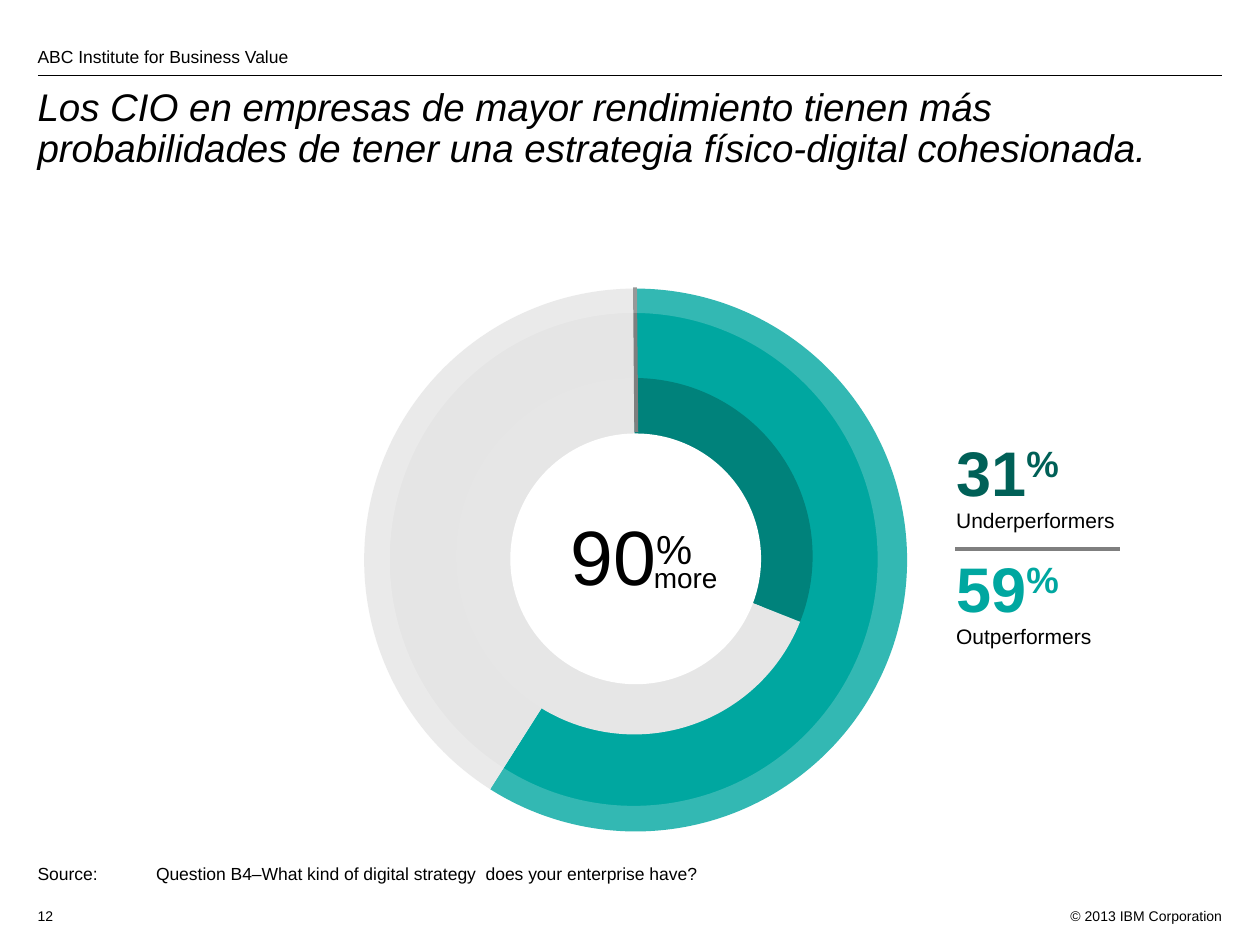
from dataclasses import dataclass

from lxml import etree
from pptx import Presentation
from pptx.chart.data import CategoryChartData
from pptx.dml.color import RGBColor
from pptx.enum.chart import XL_CHART_TYPE as ChartType
from pptx.enum.shapes import MSO_CONNECTOR as Connector, MSO_SHAPE as Shape
from pptx.enum.text import MSO_ANCHOR as Anchor, MSO_AUTO_SIZE as AutoSize, PP_ALIGN as Align
from pptx.oxml import parse_xml
from pptx.oxml.ns import nsdecls, qn
from pptx.util import Inches, Pt


@dataclass(frozen=True)
class Theme:
    font: str = "Arial"
    ink: str = "000000"
    white: str = "FFFFFF"
    rule: str = "7F7F7F"
    teal: str = "00A7A0"
    deep_teal: str = "00827B"
    dark_teal: str = "006057"
    outer_rest: str = "E5E5E5"
    inner_rest: str = "E6E6E6"
    footer: int = 8
    small: int = 10
    label: int = 12
    more: int = 16
    chart: int = 18
    title: int = 22
    stat: int = 36
    percent: int = 40
    big: int = 44


@dataclass
class Span:
    text: str
    size: int
    color: str = Theme.ink
    bold: bool = False
    italic: bool = False
    raised: bool = False


class SlideBuilder:
    def __init__(self, page, theme):
        self.page = page
        self.theme = theme

    def text(self, box_at, paras, align=Align.LEFT, spacing=None, anchor=Anchor.TOP,
             inset=0.05, grow=False, gaps=(), hanging=None):
        """Each paragraph is a list of spans; gaps maps to space before in points."""
        box = self.page.shapes.add_textbox(*map(Inches, box_at))
        frame = box.text_frame
        frame.word_wrap = True
        frame.vertical_anchor = anchor
        frame.margin_top = frame.margin_bottom = Inches(inset)
        if grow:
            frame.auto_size = AutoSize.SHAPE_TO_FIT_TEXT
        for index, spans in enumerate(paras):
            para = frame.paragraphs[0] if index == 0 else frame.add_paragraph()
            para.alignment = align
            if spacing:
                para.line_spacing = spacing
            if index in gaps:
                para.space_before = Pt(gaps[index])
            if hanging:
                props = para._p.get_or_add_pPr()
                props.set("marL", str(Inches(hanging)))
                props.set("indent", str(-Inches(hanging)))
            for span in spans:
                self.run(para, span)

    def run(self, para, span):
        run = para.add_run()
        run.text = span.text
        font = run.font
        font.name, font.size = self.theme.font, Pt(span.size)
        font.bold, font.italic = span.bold, span.italic
        font.color.rgb = RGBColor.from_string(span.color)
        if span.raised:
            run._r.get_or_add_rPr().set("baseline", "30000")

    def line(self, start, end, color, width):
        line = self.page.shapes.add_connector(
            Connector.STRAIGHT, *map(Inches, (*start, *end)))
        line.line.color.rgb = RGBColor.from_string(color)
        line.line.width = Pt(width)
        etree.SubElement(line._element.spPr, qn("a:effectLst"))

    def shape(self, kind, box_at, color, opacity=None, adjust=None):
        shape = self.page.shapes.add_shape(kind, *map(Inches, box_at))
        shape.shadow.inherit = False
        shape.line.fill.background()
        shape.fill.solid()
        shape.fill.fore_color.rgb = RGBColor.from_string(color)
        if adjust is not None:
            shape.adjustments[0] = adjust
        if opacity is not None:
            tint = shape._element.spPr.find(qn("a:solidFill"))[0]
            etree.SubElement(tint, qn("a:alpha")).set("val", str(opacity * 1000))

    def doughnut(self, box_at, ring_left, diameter, values, colors):
        data = CategoryChartData()
        data.categories = [str(number + 1) for number in range(len(values))]
        data.add_series("Series 1", values)
        chart = self.page.shapes.add_chart(
            ChartType.DOUGHNUT, *map(Inches, box_at), data).chart
        chart.has_legend = chart.has_title = False
        chart.font.name, chart.font.size = self.theme.font, Pt(self.theme.chart)
        chart.font.color.rgb = RGBColor.from_string(self.theme.ink)
        plot = chart.plots[0]
        plot.vary_by_categories = True
        for index, color in enumerate(colors):
            point = plot.series[0].points[index].format
            point.fill.solid()
            point.fill.fore_color.rgb = RGBColor.from_string(color)
            point.line.fill.background()

        # Place the ring inside the chart frame
        left, _, width, height = box_at
        sizes = {"x": (ring_left - left) / width, "y": 0,
                 "w": diameter / width, "h": diameter / height}
        items = "".join(f'<c:{key} val="{value:.4f}"/>' for key, value in sizes.items())
        layout = parse_xml(
            f'<c:layout {nsdecls("c")}><c:manualLayout><c:layoutTarget val="inner"/>'
            f'<c:xMode val="edge"/><c:yMode val="edge"/>{items}'
            '</c:manualLayout></c:layout>')
        area = chart._chartSpace.chart.plotArea
        for old in area.findall(qn("c:layout")):
            area.remove(old)
        area.insert(0, layout)


def main():
    deck = Presentation()
    deck.slide_width, deck.slide_height = Inches(10), Inches(7.5)
    theme = Theme()
    build = SlideBuilder(deck.slides.add_slide(deck.slide_layouts[6]), theme)

    # Header and title
    build.line((0.3, 0.6), (9.7, 0.6), theme.ink, 0.75)
    build.text((0.2, 0.33, 8.65, 0.2),
               [[Span("ABC Institute for Business Value", theme.small)]],
               anchor=Anchor.BOTTOM, inset=0)
    build.text((0.2, 0.65, 9.65, 0.81),
               [[Span("Los CIO en empresas de mayor rendimiento tienen más probabilidades "
                      "de tener una estrategia físico-digital cohesionada.",
                      theme.title, italic=True)]], spacing=0.9)

    # Footer and source
    build.text((8.3, 7.15, 1.5, 0.2),
               [[Span("© 2013 IBM Corporation", theme.footer)]], align=Align.RIGHT)
    build.text((0.2, 7.15, 0.4, 0.2), [[Span("12", theme.footer)]])
    build.text((0.2, 6.8, 8.7, 0.27),
               [[Span("Source:\tQuestion B4–What kind of digital strategy  "
                      "does your enterprise have?", theme.small)]],
               grow=True, hanging=0.44)

    # Key figures
    stats = [("31", "Underperformers", theme.dark_teal), ("59", "Outperformers", theme.teal)]
    paras = []
    for number, label, color in stats:
        paras.append([Span(number, theme.stat, color, bold=True),
                      Span("%", theme.stat, color, bold=True, raised=True)])
        paras.append([Span(label, theme.label)])
    build.text((7.49, 3.46, 1.65, 1.77), paras, spacing=0.9, grow=True, gaps={2: 14.5})
    build.line((7.58, 4.36), (8.89, 4.36), theme.rule, 2.25)

    # Concentric rings
    build.doughnut((1.65, 2.29, 6.4, 4.62), 2.89, 4.31, (59, 41),
                   (theme.teal, theme.outer_rest))
    build.doughnut((2.8, 3, 4.21, 3.04), 3.62, 2.83, (31, 69),
                   (theme.deep_teal, theme.inner_rest))
    build.line((5.04, 2.28), (5.05, 3.43), theme.rule, 2.25)

    # Centre of the rings
    build.shape(Shape.OVAL, (4.05, 3.44, 1.99, 1.99), theme.white)
    build.text((2.88, 4.07, 4.26, 0.78),
               [[Span("90", theme.big), Span("%", theme.percent, raised=True)]],
               align=Align.CENTER, spacing=0.9, grow=True)
    build.text((5.09, 4.43, 0.79, 0.35), [[Span("more", theme.more)]],
               spacing=0.9, grow=True)

    # Light rim over the outer ring
    build.shape(Shape.DONUT, (2.61, 2, 4.84, 4.88), theme.white, opacity=20, adjust=0.1)

    deck.save("out.pptx")


if __name__ == "__main__":
    main()
